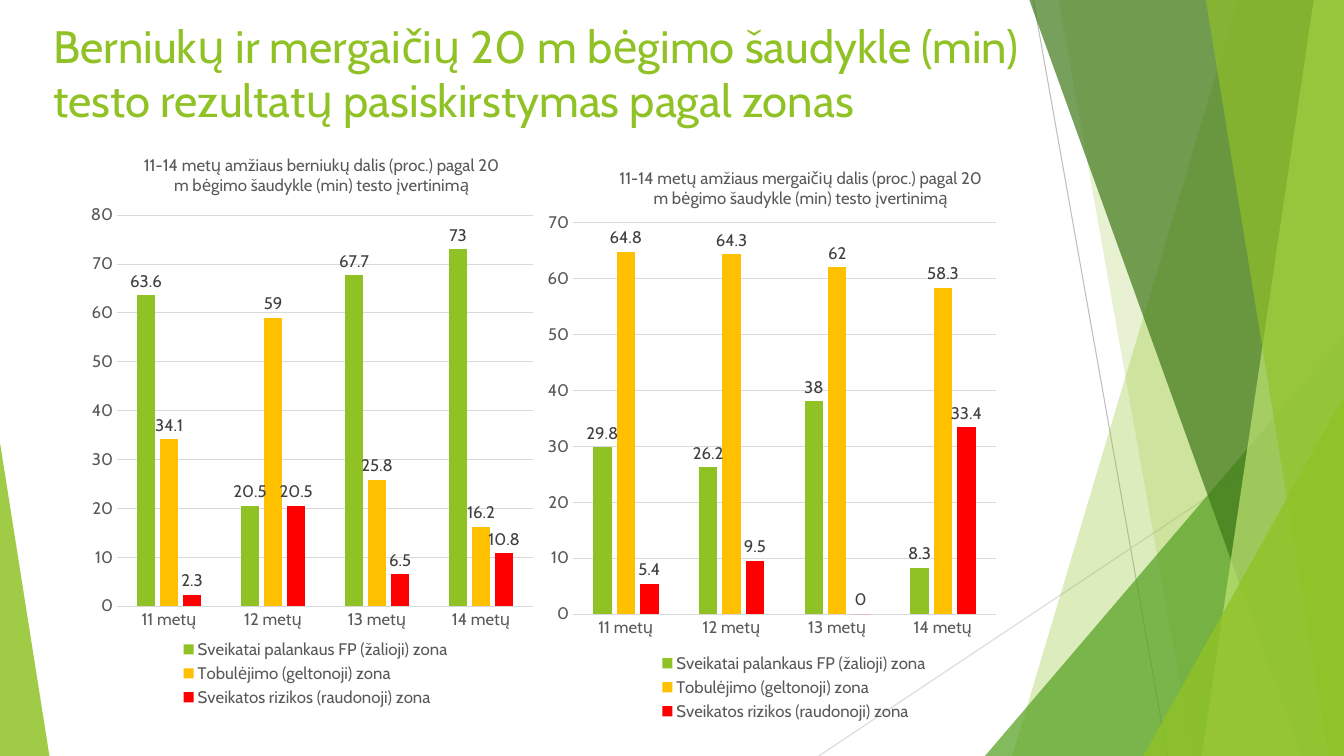
"""Build the slide on shuttle-run results of boys and girls by fitness zone."""
import pptx
import pptx.util
import pptx.chart.data
import pptx.dml.color
import pptx.enum.chart
import pptx.enum.shapes
import pptx.enum.text
import pptx.oxml.ns
import lxml.etree

THEME = {
    "font": "Cabin", "title_size": 32.4, "chart_size": 12, "line_width": 0.75,
    "lime": "90C226", "green": "54A021", "forest": "3F7819", "pale": "C0E474",
    "yellow": "FFC000", "red": "FF0000", "text": "595959", "label": "404040",
    "grid": "D9D9D9", "rule": "BFBFBF",
}
TITLE = "Berniukų ir mergaičių 20 m bėgimo šaudykle (min) testo rezultatų pasiskirstymas pagal zonas"
TITLE_BOX = (3.23, 1.73, 75.32, 19.87)

AGES = ["11 metų", "12 metų", "13 metų", "14 metų"]
ZONES = [
    ("Sveikatai palankaus FP (žalioji) zona", "lime"),
    ("Tobulėjimo (geltonoji) zona", "yellow"),
    ("Sveikatos rizikos (raudonoji) zona", "red"),
]
CHARTS = [
    {"title": "11-14 metų amžiaus berniukų dalis (proc.) pagal 20 m bėgimo šaudykle (min) testo įvertinimą",
     "box": (5.55, 19.2, 35.18, 77.2), "top": 80,
     "plot": (0.09, 0.12, 0.88, 0.67),
     "values": [(63.6, 20.5, 67.7, 73), (34.1, 59, 25.8, 16.2), (2.3, 20.5, 6.5, 10.8)]},
    {"title": "11-14 metų amžiaus mergaičių dalis (proc.) pagal 20 m bėgimo šaudykle (min) testo įvertinimą",
     "box": (40.74, 20.93, 35.86, 77.33), "top": 70,
     "plot": (0.05, 0.11, 0.88, 0.67),
     "values": [(29.8, 26.2, 38, 8.3), (64.8, 64.3, 62, 58.3), (5.4, 9.5, 0, 33.4)]},
]
TITLE_SPOT = (0.14, 0.01)
LEGEND_SPOT = (0.22, 0.84, 0.58, 0.13)

LINES = [((76.89, 0), (86.87, 100), "rule"), ((100, 53.73), (60.92, 100), "grid")]
FACETS = [
    ("wedge", (92.12, 75.32), "lime", 30),
    ("wedge", (78.77, 88.75), "lime", 20),
    ("triangle", (73.29, 44.4, 26.71, 1), "green", 72),
    ("wedge", (76.59, 96.85), "forest", 70),
    ("wedge", (97.75, 89.42), "pale", 70),
    ("wedge", (89.72, 98.87), "lime", 65),
    ("triangle", (85.07, 52.4, 14.93, 1), "lime", 80),
    ("triangle", (0, 58.53, 3.68, 0), "lime", 85),
]

qn = pptx.oxml.ns.qn
prs = pptx.Presentation()
prs.slide_width = pptx.util.Inches(13.33)
prs.slide_height = pptx.util.Inches(7.5)
slide = prs.slides.add_slide(prs.slide_layouts[6])


def rgb(name):
    return pptx.dml.color.RGBColor.from_string(THEME[name])


def x(share):
    return round(prs.slide_width * share / 100)


def y(share):
    return round(prs.slide_height * share / 100)


def box(left, top, width, height):
    return x(left), y(top), x(width), y(height)


def style_font(font, color, size="chart_size"):
    values = {"name": THEME["font"], "size": pptx.util.Pt(THEME[size]), "bold": False}
    for key, value in values.items():
        setattr(font, key, value)
    font.color.rgb = rgb(color)


def style_line(line, color):
    line.color.rgb = rgb(color)
    line.width = pptx.util.Pt(THEME["line_width"])


def add_line(start, end, color):
    sp = slide.shapes.add_connector(
        pptx.enum.shapes.MSO_CONNECTOR.STRAIGHT, x(start[0]), y(start[1]), x(end[0]), y(end[1]))
    style_line(sp.line, color)
    lxml.etree.SubElement(sp.element.spPr, qn("a:effectLst"))


def add_facet(kind, place, color, opacity):
    if kind == "wedge":
        top, bottom = place
        builder = slide.shapes.build_freeform(x(top), 0)
        builder.add_line_segments([(x(100), 0), (x(100), y(100)), (x(bottom), y(100))], close=True)
        sp = builder.convert_to_shape()
    else:
        left, top, width, apex = place
        sp = slide.shapes.add_shape(
            pptx.enum.shapes.MSO_SHAPE.ISOSCELES_TRIANGLE, *box(left, top, width, 100 - top))
        sp.adjustments[0] = apex
    sp.shadow.inherit = False
    sp.line.fill.background()
    sp.fill.solid()
    sp.fill.fore_color.rgb = rgb(color)
    fill = sp.element.spPr.find(qn("a:solidFill"))
    lxml.etree.SubElement(fill[0], qn("a:alpha"), val=str(opacity * 1000))


def add_title():
    tf = slide.shapes.add_textbox(*box(*TITLE_BOX)).text_frame
    tf.word_wrap = True
    tf.vertical_anchor = pptx.enum.text.MSO_ANCHOR.TOP
    r = tf.paragraphs[0].add_run()
    r.text = TITLE
    style_font(r.font, "lime", "title_size")


def place_part(chart, tag, index, spot):
    part = chart.element.find(".//" + qn(tag))
    for old in part.findall(qn("c:layout")):
        part.remove(old)
    layout = lxml.etree.Element(qn("c:layout"))
    part.insert(index, layout)
    manual = lxml.etree.SubElement(layout, qn("c:manualLayout"))
    settings = [("xMode", "edge"), ("yMode", "edge"), *zip("xywh", spot)]
    if tag == "c:plotArea":
        settings.insert(0, ("layoutTarget", "inner"))
    for key, value in settings:
        lxml.etree.SubElement(manual, qn("c:" + key), val=str(value))


def style_axes(chart, top):
    for axis in (chart.category_axis, chart.value_axis):
        axis.major_tick_mark = axis.minor_tick_mark = pptx.enum.chart.XL_TICK_MARK.NONE
        style_font(axis.tick_labels.font, "text")
    style_line(chart.category_axis.format.line, "grid")
    axis = chart.value_axis
    for key, value in {"minimum_scale": 0, "maximum_scale": top, "major_unit": 10}.items():
        setattr(axis, key, value)
    axis.format.line.fill.background()
    style_line(axis.major_gridlines.format.line, "grid")


def style_series(plot):
    for key, value in {"gap_width": 219, "overlap": -27, "vary_by_categories": False}.items():
        setattr(plot, key, value)
    for series, (_, color) in zip(plot.series, ZONES):
        series.format.fill.solid()
        series.format.fill.fore_color.rgb = rgb(color)
        labels = series.data_labels
        labels.show_value = True
        labels.position = pptx.enum.chart.XL_LABEL_POSITION.OUTSIDE_END
        style_font(labels.font, "label")


def add_zone_chart(content):
    data = pptx.chart.data.CategoryChartData()
    data.categories = AGES
    for (zone, _), values in zip(ZONES, content["values"]):
        data.add_series(zone, values)
    chart = slide.shapes.add_chart(
        pptx.enum.chart.XL_CHART_TYPE.COLUMN_CLUSTERED, *box(*content["box"]), data).chart
    style_font(chart.font, "text")
    r = chart.chart_title.text_frame.paragraphs[0].add_run()
    r.text = content["title"]
    style_font(r.font, "text")
    chart.has_legend = True
    chart.legend.position = pptx.enum.chart.XL_LEGEND_POSITION.RIGHT
    chart.legend.include_in_layout = False
    style_font(chart.legend.font, "text")
    style_axes(chart, content["top"])
    style_series(chart.plots[0])
    place_part(chart, "c:title", 1, TITLE_SPOT)
    place_part(chart, "c:legend", 1, LEGEND_SPOT)
    place_part(chart, "c:plotArea", 0, content["plot"])


def main():
    for line in LINES:
        add_line(*line)
    for facet in FACETS:
        add_facet(*facet)
    add_title()
    for content in CHARTS:
        add_zone_chart(content)
    prs.save("out.pptx")


if __name__ == "__main__":
    main()
